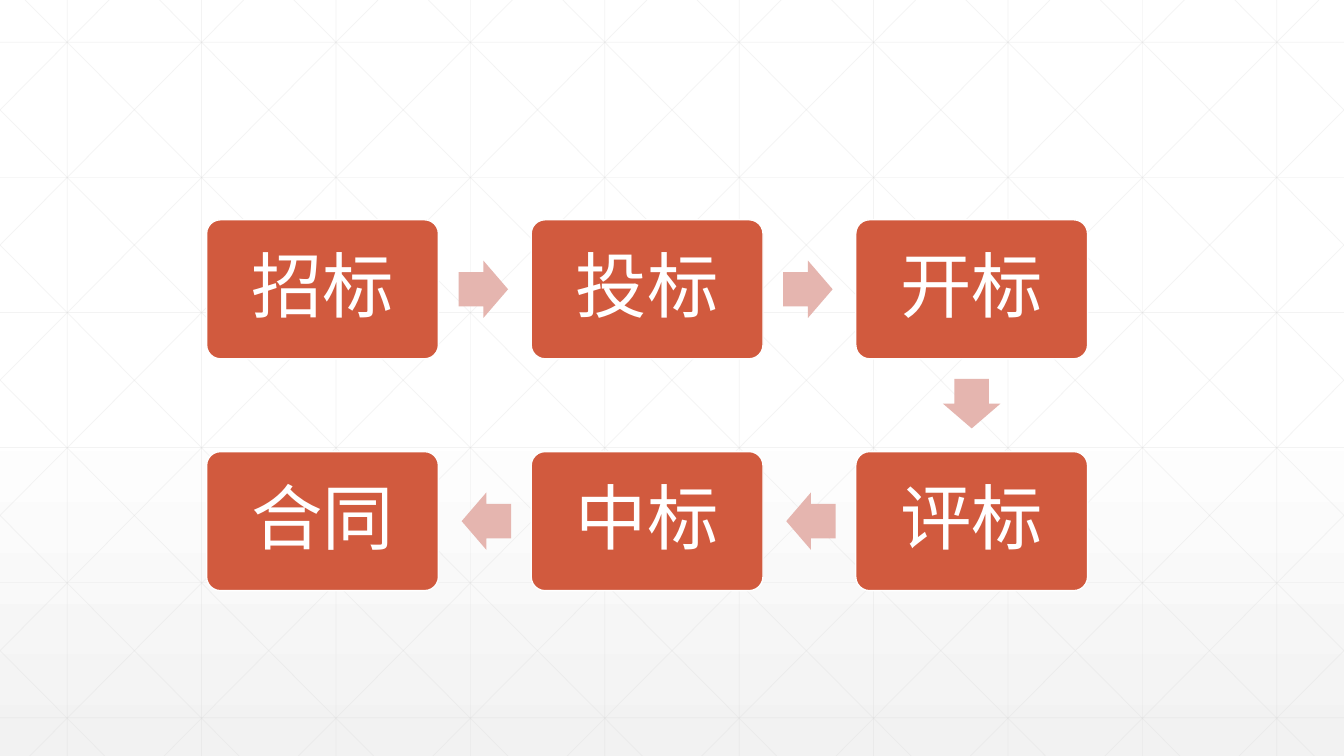
import copy
import math
from dataclasses import dataclass

import pptx
import pptx.dml.color
import pptx.enum.shapes
import pptx.enum.text
import pptx.oxml
import pptx.oxml.ns
import pptx.util
from lxml import etree

Pt = pptx.util.Pt
qn = pptx.oxml.ns.qn
SHAPES = pptx.enum.shapes.MSO_SHAPE


@dataclass(frozen=True)
class Theme:
    font: str = "Noto Sans CJK JP"
    step_size: float = 51
    step_fill: str = "D15A3E"
    arrow_fill: str = "E5B5AF"
    white: str = "FFFFFF"
    floor: str = "F2F2F2"
    grid: str = "D9D9D9"
    grid_opacity: int = 30


THEME = Theme()

# All lengths are in points
SLIDE_W, SLIDE_H = 960, 540
GRID_PITCH = 96
GRID_ROW_PITCH = 96.48
DIAGONAL_RUN = 536.8
STEP_W, STEP_H = 165.6, 99.36
COLUMN_PITCH, ROW_PITCH = 231.84, 165.6
FLOW_LEFT, FLOW_TOP = 147.6, 156.96
ARROW_W, ARROW_H = 35.28, 41.04
ARROW_SETBACK = 1.08
STEP_INSET = 18

# Each step with its column and row, in reading order of the flow
STEPS = [("招标", 0, 0), ("投标", 1, 0), ("开标", 2, 0),
         ("评标", 2, 1), ("中标", 1, 1), ("合同", 0, 1)]


def rgb(value):
    return pptx.dml.color.RGBColor.from_string(value)


def paint_background(slide):
    fill = slide.background.fill
    fill.gradient()
    fill.gradient_angle = 270
    top, bottom = fill.gradient_stops
    top.color.rgb, top.position = rgb(THEME.white), 0
    bottom.color.rgb, bottom.position = rgb(THEME.floor), 1
    # Hold white down to just past the middle
    first_stop = next(slide.element.iter(qn("a:gs")))
    middle_stop = copy.deepcopy(first_stop)
    middle_stop.set("pos", "53000")
    first_stop.addnext(middle_stop)


def add_grid_line(grid, x1, y1, x2, y2):
    line = grid.shapes.add_connector(
        pptx.enum.shapes.MSO_CONNECTOR.STRAIGHT, Pt(x1), Pt(y1), Pt(x2), Pt(y2))
    line.line.width = Pt(0.5)
    line.line.color.rgb = rgb(THEME.grid)
    color = next(line.element.iter(qn("a:srgbClr")))
    etree.SubElement(color, qn("a:alpha")).set("val", str(THEME.grid_opacity * 1000))
    etree.SubElement(line.element.spPr, qn("a:effectLst"))


def add_grid(slide):
    grid = slide.shapes.add_group_shape()
    for column in range(10):
        x = 48 + GRID_PITCH * column
        add_grid_line(grid, x, 0, x, SLIDE_H)
    for row in range(6):
        y = 30.24 + GRID_ROW_PITCH * row
        add_grid_line(grid, 0, y, SLIDE_W, y)

    # Diagonals are clipped to the slide and mirrored left to right
    slope = SLIDE_H / DIAGONAL_RUN
    for index in range(-5, 10):
        start = 18 + GRID_PITCH * index
        x1, x2 = max(start, 0), min(start + DIAGONAL_RUN, SLIDE_W)
        y1, y2 = (x1 - start) * slope, (x2 - start) * slope
        add_grid_line(grid, x1, y1, x2, y2)
        add_grid_line(grid, SLIDE_W - x1, y1, SLIDE_W - x2, y2)


def write_text(shape, text, *, size, color, font, inset, line_spacing, space_after):
    frame = shape.text_frame
    frame.word_wrap = True
    frame.vertical_anchor = pptx.enum.text.MSO_ANCHOR.MIDDLE
    frame.margin_left = frame.margin_right = Pt(inset)
    frame.margin_top = frame.margin_bottom = Pt(inset)
    paragraph = frame.paragraphs[0]
    paragraph.alignment = pptx.enum.text.PP_ALIGN.CENTER
    paragraph.line_spacing = line_spacing
    paragraph.space_after = Pt(space_after)
    run = paragraph.add_run()
    run.text = text
    run.font.size = Pt(size)
    run.font.name = font
    run.font.color.rgb = rgb(color)
    # Chinese characters take the East Asian typeface
    latin = run.font._element.find(qn("a:latin"))
    east_asian = etree.Element(qn("a:ea"), typeface=font)
    latin.addnext(east_asian)


def add_block(slide, kind, center, size, fill, adjustments):
    (cx, cy), (width, height) = center, size
    block = slide.shapes.add_shape(
        kind, Pt(cx - width / 2), Pt(cy - height / 2), Pt(width), Pt(height))
    block.shadow.inherit = False
    block.fill.solid()
    block.fill.fore_color.rgb = rgb(fill)
    block.line.fill.background()
    for index, value in enumerate(adjustments):
        block.adjustments[index] = value
    return block


def add_step(slide, label, center):
    step = add_block(slide, SHAPES.ROUNDED_RECTANGLE, center,
                     (STEP_W, STEP_H), THEME.step_fill, [0.1])
    step.line.color.rgb = rgb(THEME.white)
    step.line.width = Pt(1)
    write_text(step, label, size=THEME.step_size, color=THEME.white, font=THEME.font,
               inset=STEP_INSET, line_spacing=0.9, space_after=18)


def add_arrow(slide, source, target):
    angle = math.atan2(target[1] - source[1], target[0] - source[0])
    center = ((source[0] + target[0]) / 2 - ARROW_SETBACK * math.cos(angle),
              (source[1] + target[1]) / 2 - ARROW_SETBACK * math.sin(angle))
    arrow = add_block(slide, SHAPES.RIGHT_ARROW, center,
                      (ARROW_W, ARROW_H), THEME.arrow_fill, [0.6, 0.5])
    arrow.rotation = round(math.degrees(angle))


def add_flow(slide):
    centers = [(FLOW_LEFT + STEP_W / 2 + COLUMN_PITCH * column,
                FLOW_TOP + STEP_H / 2 + ROW_PITCH * row)
               for _, column, row in STEPS]
    for index, (label, _, _) in enumerate(STEPS):
        if index:
            add_arrow(slide, centers[index - 1], centers[index])
        add_step(slide, label, centers[index])


def main():
    deck = pptx.Presentation()
    deck.slide_width, deck.slide_height = Pt(SLIDE_W), Pt(SLIDE_H)
    slide = deck.slides.add_slide(deck.slide_layouts[6])
    paint_background(slide)
    add_grid(slide)
    add_flow(slide)
    deck.save("out.pptx")


if __name__ == "__main__":
    main()
